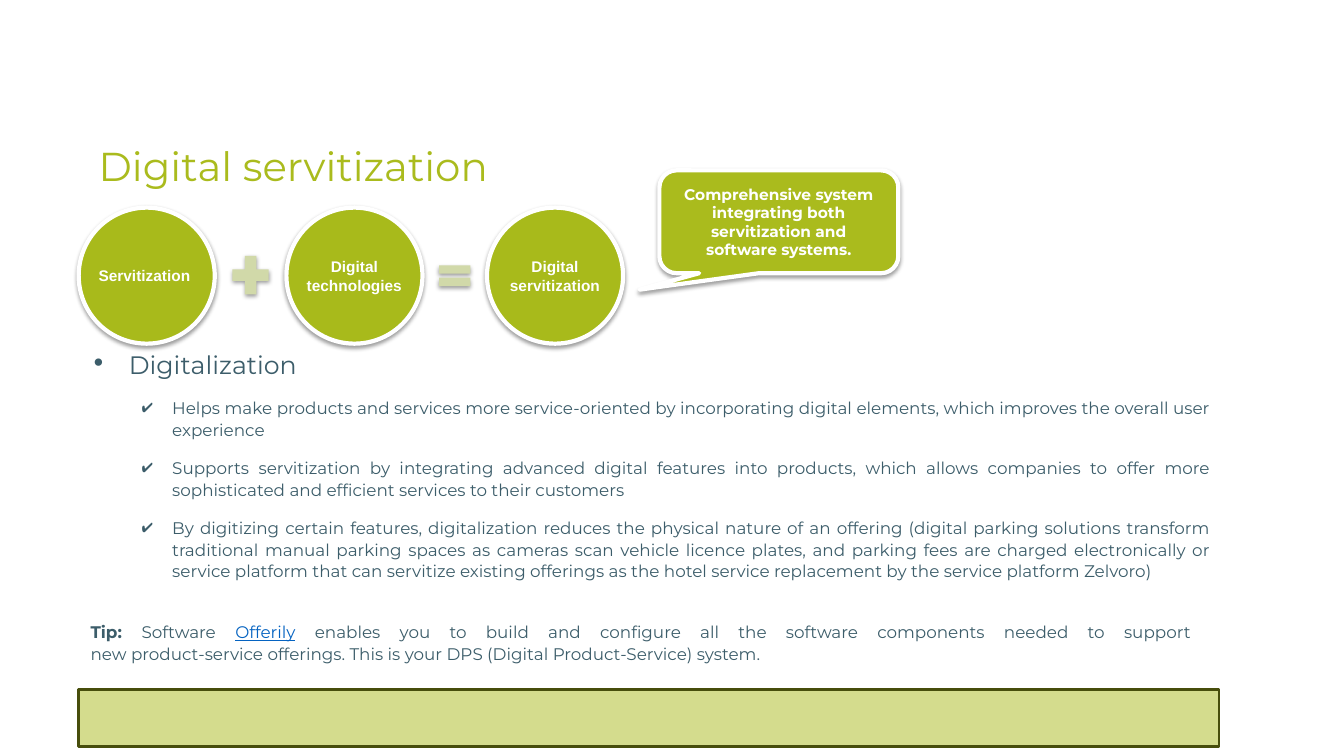
from dataclasses import dataclass, field
from typing import Any

from lxml import etree
from pptx import Presentation
from pptx.dml.color import RGBColor
from pptx.enum.shapes import MSO_SHAPE
from pptx.enum.text import MSO_ANCHOR, PP_ALIGN
from pptx.oxml.ns import qn
from pptx.util import Emu, Pt

EMU_PER_PX = 9144  # 100 px to the inch
CENTER, JUSTIFY, LEFT = PP_ALIGN.CENTER, PP_ALIGN.JUSTIFY, PP_ALIGN.LEFT
MIDDLE, TOP = MSO_ANCHOR.MIDDLE, MSO_ANCHOR.TOP
RECTANGLE, OVAL = MSO_SHAPE.RECTANGLE, MSO_SHAPE.OVAL
PLUS, EQUAL = MSO_SHAPE.MATH_PLUS, MSO_SHAPE.MATH_EQUAL
CALLOUT = MSO_SHAPE.ROUNDED_RECTANGULAR_CALLOUT

COLORS = {
    "lime": "AABB1D",
    "circle": "A8BA1B",
    "operator": "D1D9A9",
    "olive": "474E0C",
    "slate": "3C5D6A",
    "link": "0563C1",
    "white": "FFFFFF",
    "black": "000000",
}

TITLE = {"name": "Montserrat", "size": Pt(28.8)}
HEADING = {"name": "Montserrat", "size": Pt(18)}
BODY = {"name": "Montserrat", "size": Pt(12)}
LABEL = {"name": "Arial", "size": Pt(11), "bold": True}
CALLOUT_TEXT = {"name": "Montserrat", "size": Pt(11), "bold": True}

PADDING = (10, 5, 10, 5)
NO_PADDING = (0, 0, 0, 0)


@dataclass(frozen=True)
class Box:
    left: int
    top: int
    width: int
    height: int


@dataclass(frozen=True)
class Span:
    text: str
    font: dict[str, Any]
    color: str = "slate"


@dataclass(frozen=True)
class Para:
    spans: list[Span]
    format: dict[str, Any] = field(default_factory=dict)
    bullet: str = ""
    margin: int = 0
    hanging: int = 0


@dataclass(frozen=True)
class Term:
    """One circle or operator of the equation."""
    kind: Any
    width: int
    height: int
    fill: str
    label: str = ""
    align: Any = CENTER
    adjustments: tuple[float, ...] = ()


def px(length: int) -> Emu:
    return Emu(length * EMU_PER_PX)


def rgb(name: str) -> RGBColor:
    return RGBColor.from_string(COLORS[name])


def apply(target: Any, values: dict[str, Any]) -> None:
    for name, value in values.items():
        setattr(target, name, value)


def add_child(parent: Any, tag: str, **attributes: str) -> Any:
    return etree.SubElement(parent, qn(tag), attributes)


def add_bullet(paragraph: Any, para: Para) -> None:
    properties = paragraph._p.get_or_add_pPr()
    properties.set("marL", str(px(para.margin)))
    properties.set("indent", str(px(-para.hanging)))
    color = add_child(properties, "a:buClr")
    add_child(color, "a:srgbClr", val=COLORS["slate"])
    add_child(properties, "a:buChar", char=para.bullet)


def write_text(shape: Any, paras: list[Para], anchor: Any = TOP,
               padding: tuple[int, ...] = PADDING) -> None:
    frame = shape.text_frame
    sides = ("margin_left", "margin_top", "margin_right", "margin_bottom")
    apply(frame, {"word_wrap": True, "vertical_anchor": anchor})
    apply(frame, dict(zip(sides, map(px, padding))))
    for index, para in enumerate(paras):
        paragraph = frame.add_paragraph() if index else frame.paragraphs[0]
        apply(paragraph, para.format)
        if para.bullet:
            add_bullet(paragraph, para)
        for span in para.spans:
            for line_number, line in enumerate(span.text.split("\n")):
                if line_number:
                    paragraph.add_line_break()
                run = paragraph.add_run()
                run.text = line
                apply(run.font, span.font)
                run.font.color.rgb = rgb(span.color)


def add_text(page: Any, box: Box, paras: list[Para], anchor: Any = TOP) -> None:
    shape = page.shapes.add_textbox(*map(px, (box.left, box.top, box.width, box.height)))
    write_text(shape, paras, anchor)


def add_shape(page: Any, kind: Any, box: Box, fill: str, line: str = "", line_width: int = 3,
              adjustments: tuple[float, ...] = (), shadow: bool = True) -> Any:
    shape = page.shapes.add_shape(kind, *map(px, (box.left, box.top, box.width, box.height)))
    shape.shadow.inherit = False
    for index, value in enumerate(adjustments):
        shape.adjustments[index] = value
    shape.fill.solid()
    shape.fill.fore_color.rgb = rgb(fill)
    if line:
        shape.line.color.rgb = rgb(line)
        shape.line.width = Pt(line_width)
    else:
        shape.line.fill.background()
    if shadow:
        effects = shape._element.spPr.find(qn("a:effectLst"))
        outer = add_child(effects, "a:outerShdw", blurRad=str(Pt(3.1)), dist=str(Pt(1.6)),
                          dir="5400000", rotWithShape="0")
        color = add_child(outer, "a:srgbClr", val=COLORS["black"])
        add_child(color, "a:alpha", val="38000")
    return shape


def add_equation(page: Any, left: int, middle: int, gap: int, terms: list[Term]) -> None:
    for term in terms:
        box = Box(left, middle - term.height // 2, term.width, term.height)
        shape = add_shape(page, term.kind, box, term.fill, "white" if term.label else "",
                          adjustments=term.adjustments)
        if term.label:
            para = Para([Span(term.label, LABEL, "white")], {"alignment": term.align})
            write_text(shape, [para], MIDDLE, NO_PADDING)
        left += term.width + gap


EQUATION = [
    Term(OVAL, 135, 135, "circle", "Servitization", LEFT),
    Term(PLUS, 49, 52, "operator", adjustments=(0.235,)),
    Term(OVAL, 135, 135, "circle", "Digital technologies"),
    Term(EQUAL, 42, 35, "operator", adjustments=(0.235, 0.118)),
    Term(OVAL, 135, 135, "circle", "Digital servitization"),
]

BENEFITS = [
    "Helps make products and services more service-oriented by incorporating digital elements, "
    "which improves the overall user experience",
    "Supports servitization by integrating advanced digital features into products, which allows "
    "companies to offer more sophisticated and efficient services to their customers",
    "By digitizing certain features, digitalization reduces the physical nature of an offering "
    "(digital parking solutions transform traditional manual parking spaces as cameras scan "
    "vehicle licence plates, and parking fees are charged electronically or service platform that "
    "can servitize existing offerings as the hotel service replacement by the service platform "
    "Zelvoro)",
]

TIP = [
    Span("Tip: ", BODY | {"bold": True}),
    Span("Software ", BODY),
    Span("Offerily", BODY | {"underline": True}, "link"),
    Span(" enables you to build and configure all the software components needed to support \n"
         "new product-service offerings. This is your DPS (Digital Product-Service) system.", BODY),
]


def main() -> None:
    deck = Presentation()
    deck.slide_width, deck.slide_height = px(1333), px(750)
    page = deck.slides.add_slide(deck.slide_layouts[6])

    bar = add_shape(page, RECTANGLE, Box(78, 684, 1131, 57), "lime", "olive", 2, shadow=False)
    bar_color = bar._element.spPr.find(qn("a:solidFill"))[0]
    add_child(bar_color, "a:alpha", val="50000")

    title = Para([Span("Digital servitization", TITLE, "lime")], {"line_spacing": 0.9})
    add_text(page, Box(88, 139, 1108, 57), [title], MIDDLE)

    spread = {"alignment": JUSTIFY, "line_spacing": 1.07}
    heading = Para([Span("Digitalization", HEADING)], spread, "∙", 38, 38)
    benefits = [Para([Span(text, BODY)], spread | {"space_before": Pt(12)}, "✔", 81, 30)
                for text in BENEFITS]
    tip = Para(TIP, spread | {"space_before": Pt(28)})
    add_text(page, Box(80, 340, 1131, 384), [heading, *benefits, tip])

    add_equation(page, 78, 273, 11, EQUATION)

    callout = add_shape(page, CALLOUT, Box(654, 169, 237, 102), "lime", "white",
                        adjustments=(-0.583, 0.66, 0.167))
    remark = Span("Comprehensive system integrating both servitization and software systems.",
                  CALLOUT_TEXT, "white")
    write_text(callout, [Para([remark], {"alignment": CENTER})], MIDDLE)

    deck.save("out.pptx")


if __name__ == "__main__":
    main()
